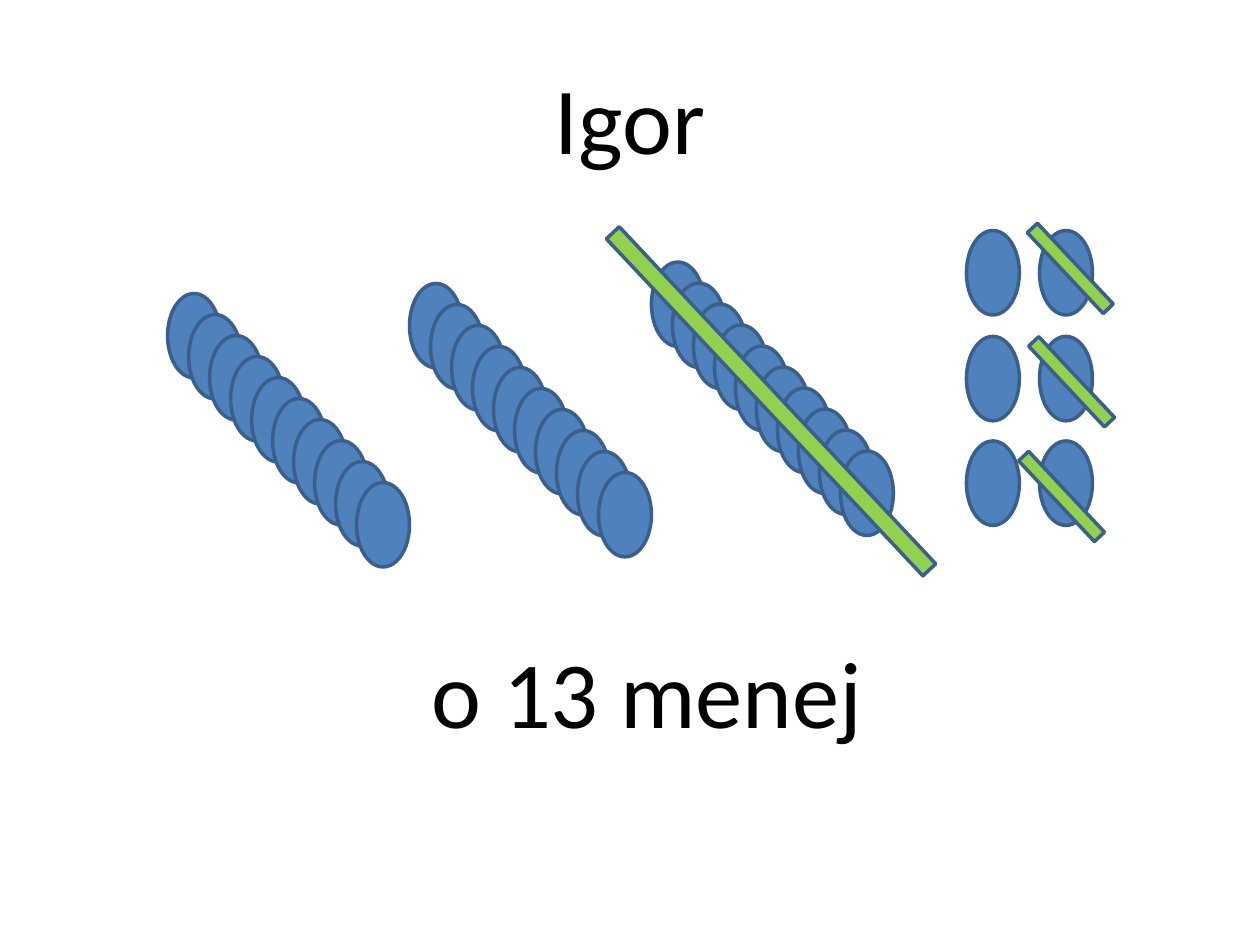
from pptx import Presentation
from pptx.dml.color import RGBColor
from pptx.enum import shapes, text
from pptx.util import Inches, Pt

THEME = {
    "font": "Calibri",
    "size": Pt(54),
    "text": RGBColor.from_string("000000"),
    "counter": RGBColor.from_string("4F81BD"),
    "strike": RGBColor.from_string("92D050"),
    "outline": RGBColor.from_string("3A5F8C"),
    "outline_width": Pt(2),
}

# wording, (left, top, width, height), alignment
LABELS = [
    ("Igor", (0.5, 0.3, 9, 1.25), text.PP_ALIGN.CENTER),
    ("o 13 menej", (3.33, 4.97, 5.5, 1.02), text.PP_ALIGN.LEFT),
]

COUNTER_SIZE = (0.42, 0.67)
TENS_STARTS = [(1.33, 2.33), (3.25, 2.25), (5.17, 2.08)]
TENS_COUNT = 10
TENS_STEP = 1 / 6
UNIT_COLUMNS = [7.67, 8.25]
UNIT_ROWS = [1.83, 2.67, 3.5]

STRIKE_ANGLE = 316.8
STRIKES = [
    (6.05, 1.35, 0.14, 3.67),
    (8.44, 1.69, 0.11, 0.88),
    (8.45, 2.59, 0.11, 0.88),
    (8.37, 3.5, 0.11, 0.88),
]


def add_label(slide, wording, box, alignment):
    label = slide.shapes.add_textbox(*map(Inches, box))
    frame = label.text_frame
    frame.word_wrap = True
    frame.vertical_anchor = text.MSO_ANCHOR.MIDDLE
    paragraph = frame.paragraphs[0]
    paragraph.text = wording
    paragraph.alignment = alignment
    paragraph.font.name = THEME["font"]
    paragraph.font.size = THEME["size"]
    paragraph.font.color.rgb = THEME["text"]


def add_outlined(slide, preset, box, fill, rotation=0):
    shape = slide.shapes.add_shape(preset, *map(Inches, box))
    shape.shadow.inherit = False
    shape.rotation = rotation
    shape.fill.solid()
    shape.fill.fore_color.rgb = THEME[fill]
    shape.line.color.rgb = THEME["outline"]
    shape.line.width = THEME["outline_width"]


def counter_positions():
    """Diagonal rows of ten, then the grid of units, from back to front."""
    tens = [(left + i * TENS_STEP, top + i * TENS_STEP)
            for left, top in TENS_STARTS for i in range(TENS_COUNT)]
    units = [(left, top) for top in UNIT_ROWS for left in UNIT_COLUMNS]
    return tens + units


def main():
    deck = Presentation()
    deck.slide_width, deck.slide_height = Inches(10), Inches(7.5)
    slide = deck.slides.add_slide(deck.slide_layouts[6])

    for label in LABELS:
        add_label(slide, *label)
    for position in counter_positions():
        add_outlined(slide, shapes.MSO_SHAPE.OVAL, position + COUNTER_SIZE, "counter")
    for strike in STRIKES:
        add_outlined(slide, shapes.MSO_SHAPE.RECTANGLE, strike, "strike", STRIKE_ANGLE)

    deck.save("out.pptx")


if __name__ == "__main__":
    main()
